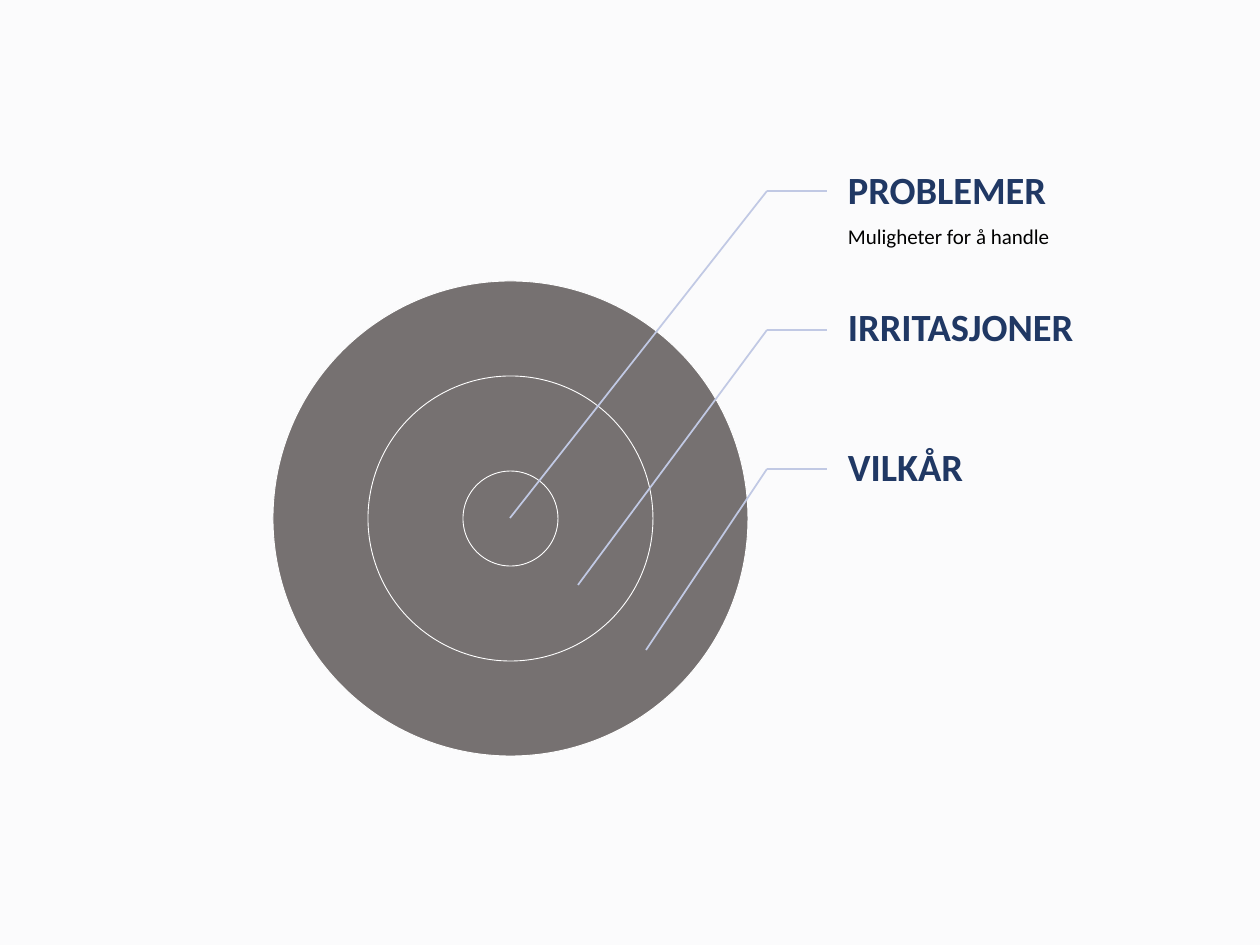
"""Build a slide of three nested circles with labelled leader lines."""
from dataclasses import dataclass

from lxml import etree
from pptx import Presentation
from pptx import util as u
from pptx.dml.color import RGBColor
from pptx.enum import shapes, text
from pptx.oxml.ns import qn
from pptx.shapes.autoshape import Shape
from pptx.shapes.connector import Connector
from pptx.slide import Slide

PX_PER_INCH = 126


@dataclass(frozen=True)
class Theme:
    background: RGBColor = RGBColor(0xFB, 0xFB, 0xFC)
    ring: RGBColor = RGBColor(0x76, 0x71, 0x71)
    ring_edge: RGBColor = RGBColor(0xFF, 0xFF, 0xFF)
    leader: RGBColor = RGBColor(0xC1, 0xC9, 0xE4)
    heading: RGBColor = RGBColor(0x20, 0x38, 0x64)
    detail: RGBColor = RGBColor(0x00, 0x00, 0x00)
    font: str = "Calibri"
    heading_size: float = 22
    detail_size: float = 12
    heading_gap: float = 7.7
    line_spacing: float = 0.9
    ring_edge_width: float = 0.5
    leader_width: float = 1


@dataclass(frozen=True)
class Category:
    heading: str
    detail: str
    left: int
    top: int
    width: int
    height: int
    leader_y: int
    target: tuple[int, int]


THEME = Theme()
CENTRE = (510, 518)
RING_UNIT = 95
RING_MULTIPLES = (5, 3, 1)
ELBOW_X = 767
LEADER_END_X = 827
TEXT_X = 848
INSET = 4
CATEGORIES = (
    Category("PROBLEMER", "Muligheter for å handle", 827, 141, 238, 138, 191, CENTRE),
    Category("IRRITASJONER", "", 808, 257, 276, 145, 330, (578, 585)),
    Category("VILKÅR", "", 827, 400, 238, 138, 469, (646, 650)),
)


def px(length: int) -> u.Emu:
    """Turn px into EMU."""
    return u.Emu(round(length * u.Inches(1) / PX_PER_INCH))


def apply_format(target: object, values: dict[str, object]) -> None:
    """Set every format value on the target."""
    for name, value in values.items():
        setattr(target, name, value)


def draw_ring(slide: Slide, diameter: int) -> None:
    """Draw one circle around the common centre."""
    left, top = (middle - diameter // 2 for middle in CENTRE)
    ring = slide.shapes.add_shape(
        shapes.MSO_SHAPE.OVAL, px(left), px(top), px(diameter), px(diameter)
    )
    ring.shadow.inherit = False
    ring.fill.solid()
    ring.fill.fore_color.rgb = THEME.ring
    ring.line.color.rgb = THEME.ring_edge
    ring.line.width = u.Pt(THEME.ring_edge_width)


def draw_label(slide: Slide, category: Category) -> Shape:
    """Write a heading and its optional detail."""
    label = slide.shapes.add_textbox(
        px(category.left), px(category.top), px(category.width), px(category.height)
    )
    frame = label.text_frame
    apply_format(frame, {
        "word_wrap": True,
        "vertical_anchor": text.MSO_ANCHOR.MIDDLE,
        "margin_left": px(TEXT_X - category.left),
        "margin_right": px(INSET),
        "margin_top": px(INSET),
        "margin_bottom": px(INSET),
    })
    rows = [(category.heading, THEME.heading_size, THEME.heading, True)]
    if category.detail:
        rows.append((category.detail, THEME.detail_size, THEME.detail, False))
    frame.text = "\n".join(row[0] for row in rows)
    for paragraph, (_, size, color, bold) in zip(frame.paragraphs, rows):
        paragraph.line_spacing = THEME.line_spacing
        apply_format(
            paragraph.font, {"name": THEME.font, "size": u.Pt(size), "bold": bold}
        )
        paragraph.font.color.rgb = color
    if category.detail:
        frame.paragraphs[0].space_after = u.Pt(THEME.heading_gap)
    return label


def draw_line(slide: Slide, start: tuple[int, int], end: tuple[int, int]) -> Connector:
    """Draw one straight part of a leader."""
    line = slide.shapes.add_connector(
        shapes.MSO_CONNECTOR.STRAIGHT, *(px(length) for length in start + end)
    )
    line.line.color.rgb = THEME.leader
    line.line.width = u.Pt(THEME.leader_width)
    etree.SubElement(line._element.spPr, qn("a:effectLst"))
    return line


def draw_category(slide: Slide, category: Category) -> None:
    """Draw a label with its bent leader."""
    label = draw_label(slide, category)
    elbow = (ELBOW_X, category.leader_y)
    label_end = (LEADER_END_X, category.leader_y)
    lead_in = draw_line(slide, elbow, label_end)
    if label_end == (category.left, category.top + category.height // 2):
        lead_in.end_connect(label, 1)
    draw_line(slide, elbow, category.target)


def main() -> None:
    """Build and save the presentation."""
    deck = Presentation()
    deck.slide_width, deck.slide_height = px(1260), px(945)
    slide = deck.slides.add_slide(deck.slide_layouts[6])
    slide.background.fill.solid()
    slide.background.fill.fore_color.rgb = THEME.background
    for multiple in RING_MULTIPLES:
        draw_ring(slide, multiple * RING_UNIT)
    for category in CATEGORIES:
        draw_category(slide, category)
    deck.save("out.pptx")


if __name__ == "__main__":
    main()
